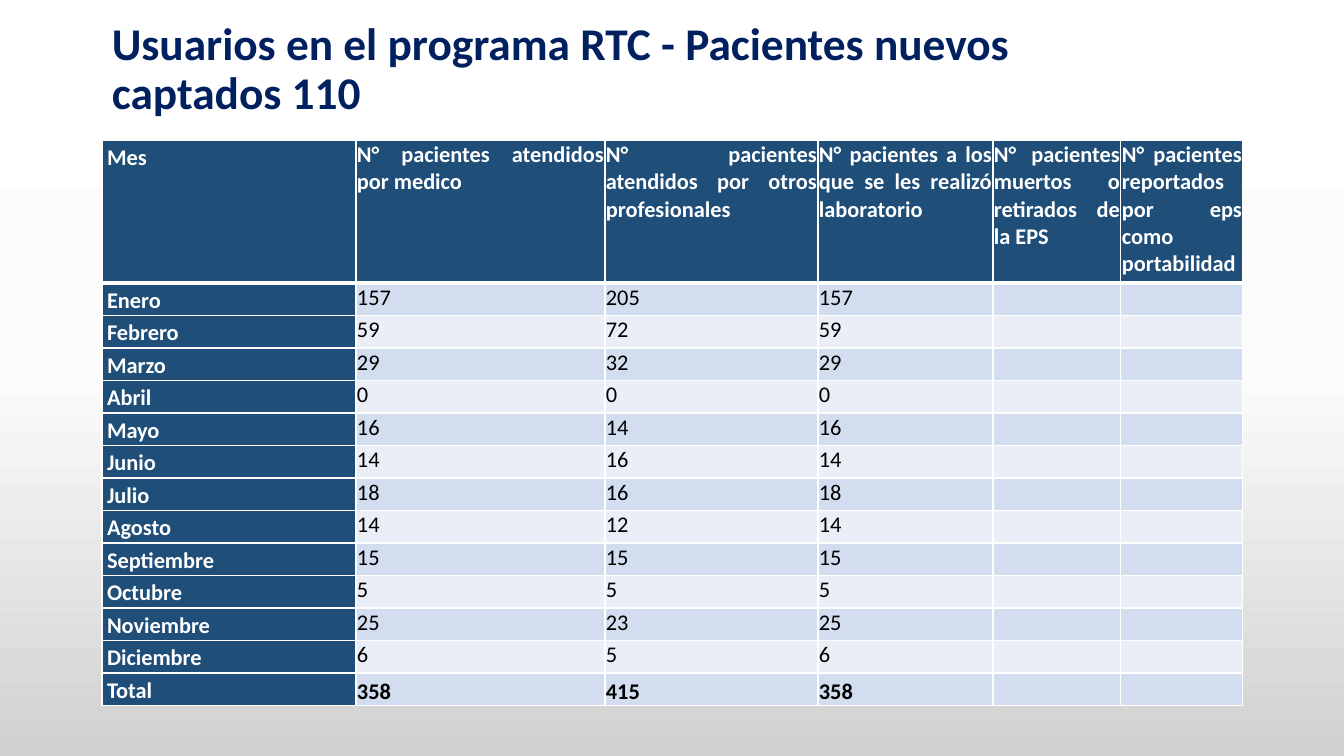
from copy import deepcopy
from dataclasses import dataclass

from lxml import etree
from pptx import Presentation
from pptx import util as u
from pptx.dml.color import RGBColor
from pptx.enum import text
from pptx.oxml.ns import qn

SCALE = 12192000 / 1344


@dataclass(frozen=True)
class Theme:
    font: str = "Calibri"
    title: str = "002060"
    head: str = "1F4E79"
    light: str = "FFFFFF"
    dark: str = "000000"
    bands: tuple = ("D2DEEF", "EAEFF7")
    background: tuple = ((0, "FFFFFF"), (0.5, "FBFBFB"), (1, "D1D1D1"))
    title_size: float = 32.4
    body_size: float = 16


T = Theme()
TITLE = "Usuarios en el programa RTC - Pacientes nuevos captados 110"
HEADERS = [
    "Mes",
    "N° pacientes atendidos por medico",
    "N° pacientes atendidos por otros profesionales",
    "N° pacientes a los que se les realizó laboratorio",
    "N° pacientes muertos o retirados de la EPS",
    "N° pacientes reportados por eps como portabilidad",
]
ROWS = [
    ("Enero", 157, 205, 157),
    ("Febrero", 59, 72, 59),
    ("Marzo", 29, 32, 29),
    ("Abril", 0, 0, 0),
    ("Mayo", 16, 14, 16),
    ("Junio", 14, 16, 14),
    ("Julio", 18, 16, 18),
    ("Agosto", 14, 12, 14),
    ("Septiembre", 15, 15, 15),
    ("Octubre", 5, 5, 5),
    ("Noviembre", 25, 23, 25),
    ("Diciembre", 6, 5, 6),
    ("Total", 358, 415, 358),
]
COLUMN_WIDTHS = [254, 249, 213, 175, 128, 122]
HEADER_HEIGHT = 143


def px(n):
    return u.Emu(round(n * SCALE))


def write(tf, words, size, color, bold=False, align=text.PP_ALIGN.LEFT, spacing=None):
    p = tf.paragraphs[0]
    p.alignment = align
    p.line_spacing = spacing
    r = p.add_run()
    r.text = words
    r.font.name, r.font.size, r.font.bold = T.font, u.Pt(size), bold
    r.font.color.rgb = RGBColor.from_string(color)


def paint_background(s):
    fill = s.background.fill
    fill.gradient()
    fill.gradient_angle = 270
    stops = s.element.find(".//" + qn("a:gsLst"))
    stops.append(deepcopy(stops[-1]))
    for stop, (position, color) in zip(fill.gradient_stops, T.background):
        stop.position = position
        stop.color.rgb = RGBColor.from_string(color)


def add_title(s, x, y, w, h):
    tf = s.shapes.add_textbox(px(x), px(y), px(w), px(h)).text_frame
    tf.word_wrap = True
    tf.vertical_anchor = text.MSO_ANCHOR.MIDDLE
    write(tf, TITLE, T.title_size, T.title, bold=True, spacing=0.9)


def set_borders(cell, top, bottom):
    """Draw white cell borders; top and bottom are widths in points."""
    tc_pr = cell._tc.get_or_add_tcPr()
    for side, width in zip("LRTB", (1, 1, top, bottom)):
        ln = etree.SubElement(tc_pr, qn(f"a:ln{side}"), w=str(u.Pt(width)))
        fill = etree.SubElement(ln, qn("a:solidFill"))
        etree.SubElement(fill, qn("a:srgbClr"), val=T.light)


def format_cell(cell, i, j, words):
    header, month, total = i == 0, j == 0, i == len(ROWS)
    set_borders(cell, top=3 if i == 1 else 1, bottom=3 if header else 1)
    cell.fill.solid()
    color = T.head if header or month else T.bands[(i - 1) % 2]
    cell.fill.fore_color.rgb = RGBColor.from_string(color)
    cell.margin_left = cell.margin_right = u.Inches(0.05 if month else 0.01)
    cell.margin_top = u.Inches(0 if month else 0.01)
    cell.margin_bottom = 0
    if total and not month:
        cell.vertical_anchor = text.MSO_ANCHOR.BOTTOM
    if words:
        label = header or month
        write(cell.text_frame, words, T.body_size,
              T.light if label else T.dark,
              bold=label or total,
              align=text.PP_ALIGN.JUSTIFY if label else text.PP_ALIGN.LEFT,
              spacing=1.15 if month else None)


def add_patient_table(s, x, y, w, h):
    grid = [HEADERS] + [[str(v) for v in row] + ["", ""] for row in ROWS]
    table = s.shapes.add_table(len(grid), len(HEADERS),
                               px(x), px(y), px(w), px(h)).table
    for column, width in zip(table.columns, COLUMN_WIDTHS):
        column.width = px(width)
    for i, row in enumerate(grid):
        table.rows[i].height = px((h - HEADER_HEIGHT) / len(ROWS) if i else HEADER_HEIGHT)
        for j, words in enumerate(row):
            format_cell(table.cell(i, j), i, j, words)


def main():
    prs = Presentation()
    prs.slide_width, prs.slide_height = px(1344), px(756)
    s = prs.slides.add_slide(prs.slide_layouts[6])
    paint_background(s)
    add_title(s, 102, 21, 986, 99)
    add_patient_table(s, 102, 140, sum(COLUMN_WIDTHS), 566)
    prs.save("out.pptx")


if __name__ == "__main__":
    main()
